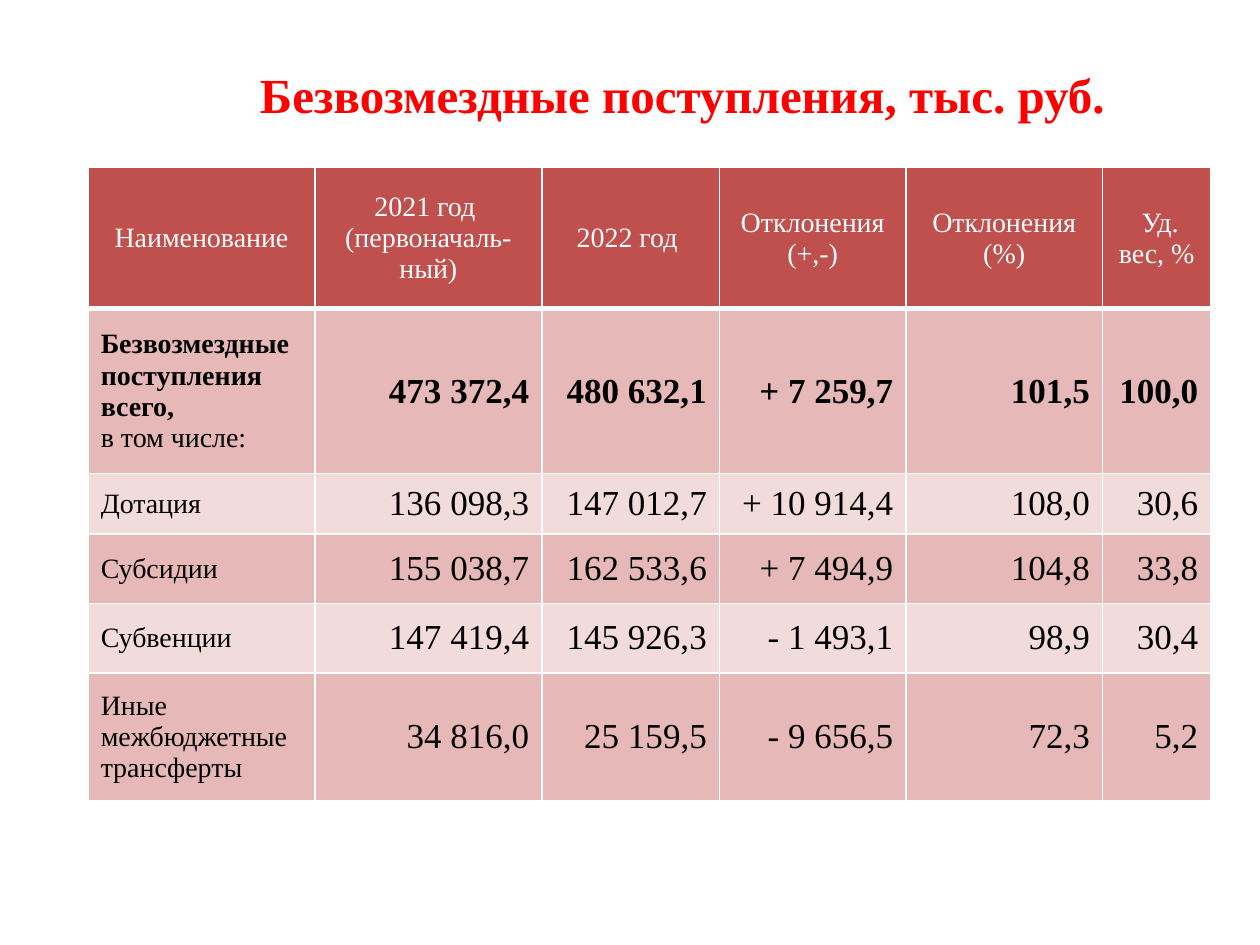
from dataclasses import dataclass

from lxml.etree import SubElement
from pptx import Presentation
from pptx.dml.color import RGBColor
from pptx.enum.text import MSO_ANCHOR as Anchor, PP_ALIGN as Align
from pptx.oxml import parse_xml
from pptx.oxml.ns import nsdecls, qn
from pptx.util import Inches, Pt


@dataclass(frozen=True)
class Theme:
    font: str = "Times New Roman"
    title: str = "FF0000"
    header: str = "C0504D"
    bands: tuple[str, str] = ("E6B9B8", "F2DCDB")
    light: str = "FFFFFF"
    dark: str = "000000"
    title_size: int = 28
    label_size: int = 16
    value_size: int = 20
    line: int = 1
    header_line: int = 3


@dataclass(frozen=True)
class Row:
    label: str
    values: tuple[str, ...]
    height: float
    bold: bool = False
    note: str = ""


THEME = Theme()
TITLE = "Безвозмездные поступления, тыс. руб."
WIDTHS = (1.8, 1.8, 1.41, 1.48, 1.56, 0.86)
HEADER_HEIGHT = 1.12
HEADERS = (
    ("Наименование",),
    ("2021 год ", "(первоначаль-ный)"),
    ("2022 год ",),
    ("Отклонения (+,-)",),
    ("Отклонения (%)",),
    (" Уд. вес, %",),
)
ROWS = (
    Row("Безвозмездные поступления всего,",
        ("473 372,4", "480 632,1", "+ 7 259,7", "101,5", "100,0"), 1.31, True, "в том числе:"),
    Row("Дотация", ("136 098,3", "147 012,7", "+ 10 914,4", "108,0", "30,6"), 0.48),
    Row("Субсидии", ("155 038,7", "162 533,6", "+ 7 494,9", "104,8", "33,8"), 0.55),
    Row("Субвенции", ("147 419,4", "145 926,3", "- 1 493,1", "98,9", "30,4"), 0.55),
    Row("Иные межбюджетные трансферты",
        ("34 816,0", "25 159,5", "- 9 656,5", "72,3", "5,2"), 1.02),
)


def write(p, text: str, *, size: int, color: str, bold: bool = False, align=Align.LEFT):
    """Add one formatted run to a paragraph and return it."""
    p.alignment = align
    r = p.add_run()
    r.text = text
    r.font.name = THEME.font
    r.font.size = Pt(size)
    r.font.bold = bold
    r.font.color.rgb = RGBColor.from_string(color)
    return r


def add_text_shadow(r) -> None:
    """Give a run a soft shadow below its letters."""
    shadow = parse_xml(
        f'<a:effectLst {nsdecls("a")}><a:outerShdw blurRad="38100" dist="38100" dir="2700000" '
        'algn="tl"><a:srgbClr val="000000"><a:alpha val="43000"/></a:srgbClr>'
        '</a:outerShdw></a:effectLst>')
    r.font._element.find(qn("a:solidFill")).addnext(shadow)


def style_cell(cell, fill: str, bottom: int = THEME.line) -> None:
    """Set the borders, fill and anchor of a cell."""
    tc_pr = cell._tc.get_or_add_tcPr()
    for side in "LRTB":
        width = bottom if side == "B" else THEME.line
        ln = SubElement(tc_pr, qn(f"a:ln{side}"), w=str(Pt(width)))
        SubElement(SubElement(ln, qn("a:solidFill")), qn("a:srgbClr"), val=THEME.light)
    cell.fill.solid()
    cell.fill.fore_color.rgb = RGBColor.from_string(fill)
    cell.vertical_anchor = Anchor.MIDDLE


def add_title(s) -> None:
    """Place and format the slide title."""
    sp = s.shapes.title
    sp.left, sp.top, sp.width, sp.height = map(Inches, (1.33, 0.31, 8.17, 0.87))
    tf = sp.text_frame
    tf.word_wrap = True
    tf.vertical_anchor = Anchor.MIDDLE
    r = write(tf.paragraphs[0], TITLE, size=THEME.title_size, color=THEME.title,
              bold=True, align=Align.CENTER)
    add_text_shadow(r)


def fill_header(table) -> None:
    """Write the column headings."""
    for col, lines in enumerate(HEADERS):
        cell = table.cell(0, col)
        style_cell(cell, THEME.header, THEME.header_line)
        tf = cell.text_frame
        for i, line in enumerate(lines):
            p = tf.add_paragraph() if i else tf.paragraphs[0]
            write(p, line, size=THEME.label_size, color=THEME.light, align=Align.CENTER)


def fill_row(table, index: int, row: Row) -> None:
    """Write the label and the values of one income row."""
    for cell in table.rows[index].cells:
        style_cell(cell, THEME.bands[(index - 1) % 2])
    tf = table.cell(index, 0).text_frame
    write(tf.paragraphs[0], row.label, size=THEME.label_size, color=THEME.dark, bold=row.bold)
    if row.note:
        write(tf.add_paragraph(), row.note, size=THEME.label_size, color=THEME.dark)
    for col, value in enumerate(row.values, 1):
        write(table.cell(index, col).text_frame.paragraphs[0], value, size=THEME.value_size,
              color=THEME.dark, bold=row.bold, align=Align.RIGHT)


def add_income_table(s) -> None:
    """Build the table of income by kind."""
    heights = (HEADER_HEIGHT, *(row.height for row in ROWS))
    table = s.shapes.add_table(len(heights), len(WIDTHS), Inches(0.7), Inches(1.33),
                               Inches(sum(WIDTHS)), Inches(sum(heights))).table
    for column, width in zip(table.columns, WIDTHS):
        column.width = Inches(width)
    for line, height in zip(table.rows, heights):
        line.height = Inches(height)
    fill_header(table)
    for index, row in enumerate(ROWS, 1):
        fill_row(table, index, row)


def main() -> None:
    """Create the presentation and save it."""
    prs = Presentation()
    prs.slide_width, prs.slide_height = Inches(10), Inches(7.5)
    s = prs.slides.add_slide(prs.slide_layouts[5])
    add_title(s)
    add_income_table(s)
    prs.save("out.pptx")


if __name__ == "__main__":
    main()
